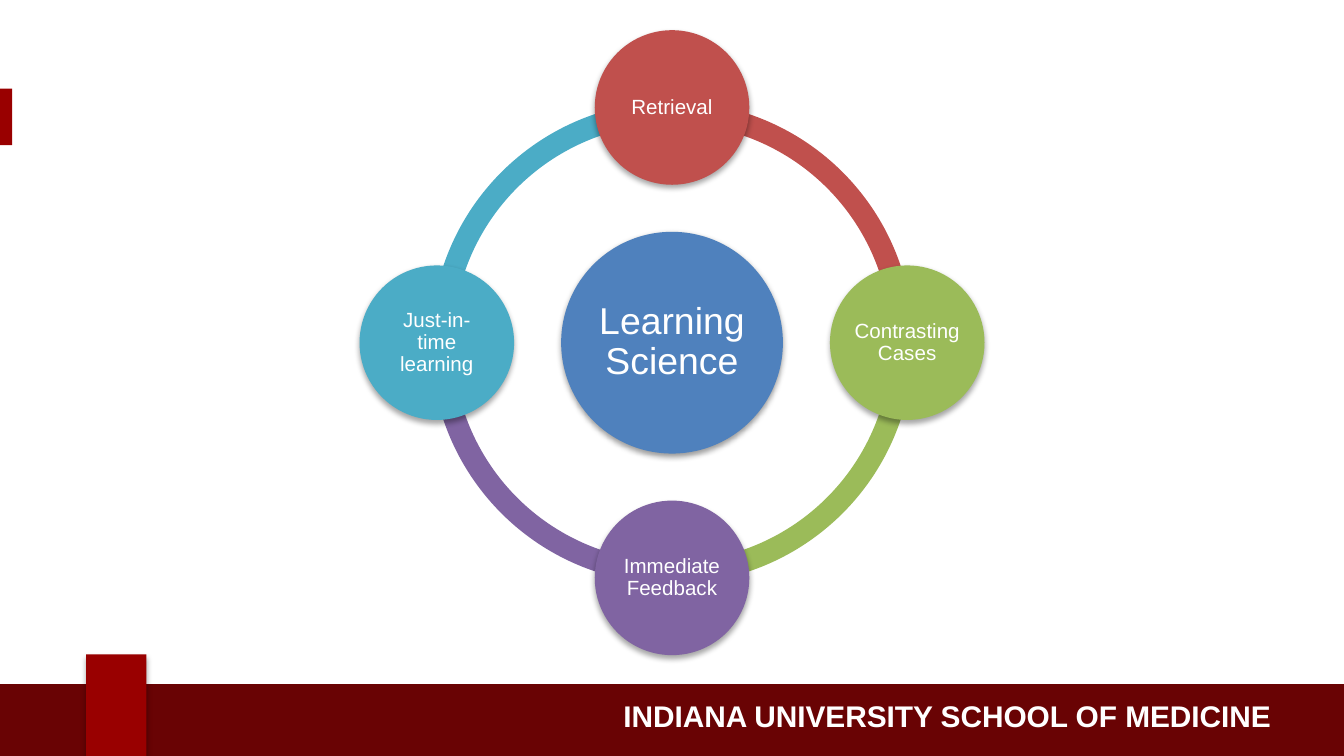
import math

import pptx
import pptx.dml.color
import pptx.enum.shapes
import pptx.enum.text
import pptx.oxml.ns
import pptx.util
from lxml import etree
from pptx.util import Inches

MSO_SHAPE = pptx.enum.shapes.MSO_SHAPE
PP_ALIGN = pptx.enum.text.PP_ALIGN

COLORS = {
    "crimson": "990000",
    "maroon": "690304",
    "white": "FFFFFF",
    "blue": "4F81BD",
    "red": "C0504D",
    "green": "9BBB59",
    "purple": "8064A2",
    "teal": "4BACC6",
}
CENTER_X, CENTER_Y = 5, 2.55
ORBIT = 1.75
RING_SIZE = 3.59
# Clockwise from the top
TOPICS = [
    ("Retrieval", "red"),
    ("Contrasting Cases", "green"),
    ("Immediate Feedback", "purple"),
    ("Just-in-time learning", "teal"),
]


def add_filled(slide, kind, x, y, w, h, color):
    s = slide.shapes.add_shape(kind, Inches(x), Inches(y), Inches(w), Inches(h))
    s.shadow.inherit = False
    s.fill.solid()
    s.fill.fore_color.rgb = pptx.dml.color.RGBColor.from_string(COLORS[color])
    s.line.fill.background()
    return s


def add_shadow(s, opacity=35, distance=1.8):
    """Drop a soft black shadow straight down; distance is in points."""
    qn = pptx.oxml.ns.qn
    effects = s.element.spPr.find(qn("a:effectLst"))
    shadow = etree.SubElement(
        effects, qn("a:outerShdw"), blurRad=str(pptx.util.Pt(3.1)),
        dist=str(pptx.util.Pt(distance)), dir="5400000", rotWithShape="0")
    black = etree.SubElement(shadow, qn("a:srgbClr"), val="000000")
    etree.SubElement(black, qn("a:alpha"), val=str(opacity * 1000))


def write_text(s, text, size, align, bold=False):
    tf = s.text_frame
    tf.word_wrap = True
    tf.vertical_anchor = pptx.enum.text.MSO_ANCHOR.MIDDLE
    tf.text = text
    p = tf.paragraphs[0]
    p.alignment = align
    font = p.runs[0].font
    font.name = "Arial"
    font.size = pptx.util.Pt(size)
    font.bold = bold
    font.color.rgb = pptx.dml.color.RGBColor.from_string(COLORS["white"])
    return tf


def add_circle(slide, x, y, size, color, text, text_size, inset):
    """Add a labelled circle centred on x, y; inset is in points."""
    s = add_filled(slide, MSO_SHAPE.OVAL, x - size / 2, y - size / 2, size, size, color)
    tf = write_text(s, text, text_size, PP_ALIGN.CENTER)
    tf.margin_left = tf.margin_right = pptx.util.Pt(inset)
    tf.margin_top = tf.margin_bottom = pptx.util.Pt(inset)
    tf.paragraphs[0].line_spacing = 0.9
    return s


def add_ring_quarter(slide, start, color):
    """Add a quarter of the ring, clockwise from start degrees."""
    s = add_filled(slide, MSO_SHAPE.BLOCK_ARC, CENTER_X - RING_SIZE / 2,
                   CENTER_Y - RING_SIZE / 2, RING_SIZE, RING_SIZE, color)
    # Angles are stored in 60000ths of a degree, adjustments in 100000ths
    s.adjustments[0] = start * 0.6
    s.adjustments[1] = (start + 90) % 360 * 0.6
    s.adjustments[2] = 0.046


def add_branding(slide):
    add_filled(slide, MSO_SHAPE.RECTANGLE, 0, 0.66, 0.09, 0.42, "crimson")
    add_filled(slide, MSO_SHAPE.RECTANGLE, -0.03, 5.09, 10.09, 0.55, "maroon")
    school = slide.shapes.add_textbox(Inches(2.82), Inches(5.14), Inches(6.74), Inches(0.37))
    write_text(school, "INDIANA UNIVERSITY SCHOOL OF MEDICINE", 16, PP_ALIGN.RIGHT, bold=True)
    tab = add_filled(slide, MSO_SHAPE.RECTANGLE, 0.64, 4.87, 0.45, 0.76, "crimson")
    add_shadow(tab)


def add_cycle(slide):
    angles = [(270 + 90 * i) % 360 for i in range(len(TOPICS))]
    for angle, (_, color) in reversed(list(zip(angles, TOPICS))):
        add_ring_quarter(slide, angle, color)
    hub = add_circle(slide, CENTER_X, CENTER_Y, 1.65, "blue", "Learning Science", 20, 2)
    add_shadow(hub, opacity=38, distance=1.6)
    for angle, (text, color) in zip(angles, TOPICS):
        x = CENTER_X + ORBIT * math.cos(math.radians(angle))
        y = CENTER_Y + ORBIT * math.sin(math.radians(angle))
        add_shadow(add_circle(slide, x, y, 1.15, color, text, 11, 1))


def main():
    prs = pptx.Presentation()
    prs.slide_width = Inches(10)
    prs.slide_height = Inches(10 * 9 / 16)
    slide = prs.slides.add_slide(prs.slide_layouts[6])
    add_branding(slide)
    add_cycle(slide)
    prs.save("out.pptx")


if __name__ == "__main__":
    main()
